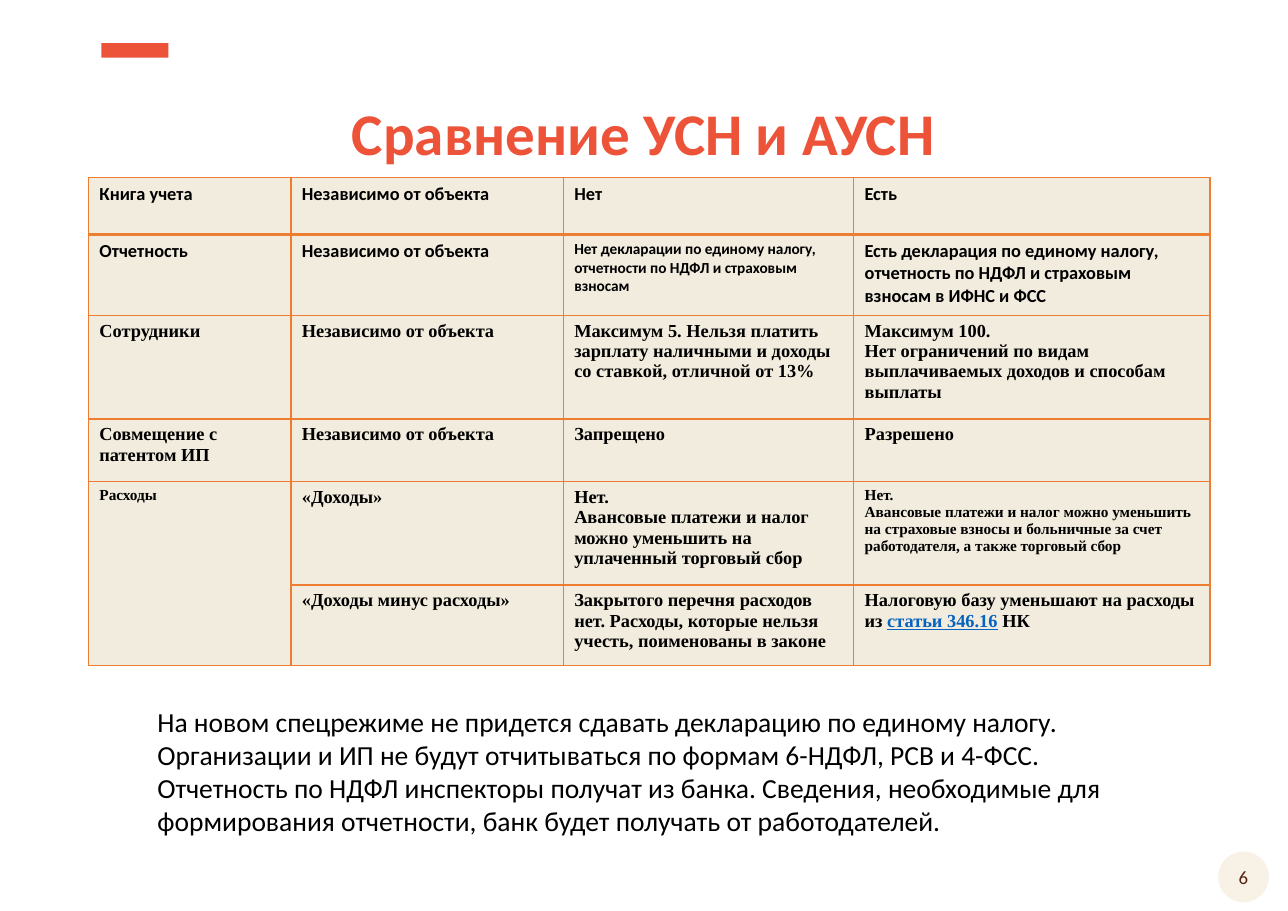
from collections import namedtuple
from dataclasses import dataclass

from lxml import etree
from pptx import Presentation
from pptx import util as u
from pptx.dml import color
from pptx.enum import shapes, text
from pptx.oxml import ns

Box = namedtuple("Box", "left top width height")


@dataclass(frozen=True)
class Theme:
    accent: str = "ED5338"
    badge: str = "F7F2E5"
    badge_text: str = "562212"
    cell: str = "F2ECDE"
    border: str = "ED7D31"
    ink: str = "000000"
    link: str = "0563C1"
    sans: str = "Calibri"
    serif: str = "Times New Roman"
    title_size: float = 38.6
    body_size: float = 18
    number_size: float = 12.3
    cell_size: float = 12
    small_size: float = 10


THEME = Theme()

COLUMN_WIDTHS = (132.3, 178, 189.8, 232.9)
ROW_HEIGHTS = (37.2, 52.7, 67.8, 40.8, 67.8, 52.6)
SANS_ROWS = (0, 1)
SMALL_CELLS = {(1, 2), (4, 0), (4, 3)}
LINK_TEXT = "статьи 346.16"
COMPARISON = (
    ("Книга учета", "Независимо от объекта", "Нет", "Есть"),
    ("Отчетность", "Независимо от объекта",
     "Нет декларации по единому налогу, отчетности по НДФЛ и страховым взносам",
     "Есть декларация по единому налогу, отчетность по НДФЛ и страховым "
     "взносам в ИФНС и ФСС"),
    ("Сотрудники", "Независимо от объекта",
     "Максимум 5. Нельзя платить зарплату наличными и доходы со ставкой, "
     "отличной от 13%",
     "Максимум 100.\nНет ограничений по видам выплачиваемых доходов и "
     "способам выплаты"),
    ("Совмещение с патентом ИП", "Независимо от объекта", "Запрещено", "Разрешено"),
    ("Расходы", "«Доходы»",
     "Нет.\nАвансовые платежи и налог можно уменьшить на уплаченный торговый сбор",
     "Нет.\nАвансовые платежи и налог можно уменьшить на страховые взносы "
     "и больничные за счет работодателя, а также торговый сбор"),
    ("", "«Доходы минус расходы»",
     "Закрытого перечня расходов нет. Расходы, которые нельзя учесть, "
     "поименованы в законе",
     f"Налоговую базу уменьшают на расходы из {LINK_TEXT} НК"),
)
CONCLUSION = (
    "На новом спецрежиме не придется сдавать декларацию по единому "
    "налогу. Организации и ИП не будут отчитываться по формам 6-НДФЛ, РСВ и 4-"
    "ФСС. Отчетность по НДФЛ инспекторы получат из банка. Сведения, необходимые "
    "для формирования отчетности, банк будет получать от работодателей."
)


def rgb(value):
    return color.RGBColor.from_string(value)


def points(box):
    return [u.Pt(length) for length in box]


def add_run(paragraph, words, size, ink, face=THEME.sans, bold=False, underline=False):
    run = paragraph.add_run()
    run.text = words
    font = run.font
    font.name, font.size, font.bold = face, u.Pt(size), bold
    font.underline = underline
    font.color.rgb = rgb(ink)


def add_filled_shape(slide, kind, box, fill):
    shape = slide.shapes.add_shape(kind, *points(box))
    shape.shadow.inherit = False
    shape.fill.solid()
    shape.fill.fore_color.rgb = rgb(fill)
    shape.line.fill.background()
    return shape


def add_text_box(slide, box):
    frame = slide.shapes.add_textbox(*points(box)).text_frame
    frame.word_wrap = True
    return frame


# Accent bar and heading
def add_heading(slide, box):
    bar = Box(box.left + 8.6, box.top - 3.4, 43.9, 9.4)
    add_filled_shape(slide, shapes.MSO_SHAPE.RECTANGLE, bar, THEME.accent)
    frame = add_text_box(slide, box)
    frame.vertical_anchor = text.MSO_ANCHOR.MIDDLE
    paragraph = frame.paragraphs[0]
    paragraph.alignment = text.PP_ALIGN.CENTER
    paragraph.line_spacing = 0.9
    add_run(paragraph, "Сравнение УСН и АУСН", THEME.title_size, THEME.accent, bold=True)


# Comparison table
def set_borders(cell, widths):
    properties = cell._tc.get_or_add_tcPr()
    for side, width in widths.items():
        line = etree.SubElement(properties, ns.qn(f"a:ln{side}"), w=str(u.Pt(width)))
        fill = etree.SubElement(line, ns.qn("a:solidFill"))
        etree.SubElement(fill, ns.qn("a:srgbClr"), val=THEME.border)


def write_cell(cell, words, size, face):
    paragraph = cell.text_frame.paragraphs[0]
    for index, line in enumerate(words.split("\n")):
        if index:
            paragraph.add_line_break()
        before, link, after = line.partition(LINK_TEXT)
        for part, ink in ((before, THEME.ink), (link, THEME.link), (after, THEME.ink)):
            if part:
                add_run(paragraph, part, size, ink, face, True, ink == THEME.link)


def add_comparison(slide, box):
    frame = slide.shapes.add_table(len(ROW_HEIGHTS), len(COLUMN_WIDTHS), *points(box))
    table = frame.table
    table.first_row = table.horz_banding = False
    for column, width in zip(table.columns, COLUMN_WIDTHS):
        column.width = u.Pt(width)
    for row, height in zip(table.rows, ROW_HEIGHTS):
        row.height = u.Pt(height)
    table.cell(4, 0).merge(table.cell(5, 0))
    for i, row in enumerate(COMPARISON):
        face = THEME.sans if i in SANS_ROWS else THEME.serif
        for j, words in enumerate(row):
            cell = table.cell(i, j)
            # The rule under the first row is twice as thick
            set_borders(cell, {"L": 1, "R": 1, "T": 2 if i == 1 else 1,
                               "B": 2 if i == 0 else 1})
            cell.fill.solid()
            cell.fill.fore_color.rgb = rgb(THEME.cell)
            if words:
                small = (i, j) in SMALL_CELLS
                size = THEME.small_size if small else THEME.cell_size
                write_cell(cell, words, size, face)


# Conclusion below the table
def add_conclusion(slide, box):
    paragraph = add_text_box(slide, box).paragraphs[0]
    add_run(paragraph, CONCLUSION, THEME.body_size, THEME.ink)


# Page number in a circle
def add_page_number(slide, box):
    badge = add_filled_shape(slide, shapes.MSO_SHAPE.OVAL, box, THEME.badge)
    frame = badge.text_frame
    frame.margin_left = frame.margin_right = frame.margin_top = frame.margin_bottom = 0
    frame.vertical_anchor = text.MSO_ANCHOR.MIDDLE
    paragraph = frame.paragraphs[0]
    paragraph.alignment = text.PP_ALIGN.CENTER
    add_run(paragraph, "6", THEME.number_size, THEME.badge_text)


def main():
    presentation = Presentation()
    presentation.slide_width = u.Pt(841.68)
    presentation.slide_height = u.Pt(595.44)
    slide = presentation.slides.add_slide(presentation.slide_layouts[6])
    add_page_number(slide, Box(796.1, 556.6, 33.1, 33.1))
    add_heading(slide, Box(57.6, 31.7, 725.8, 115.2))
    add_comparison(slide, Box(57.8, 116.2, sum(COLUMN_WIDTHS), sum(ROW_HEIGHTS)))
    add_conclusion(slide, Box(95.8, 457.4, 665.3, 95))
    presentation.save("out.pptx")


if __name__ == "__main__":
    main()
